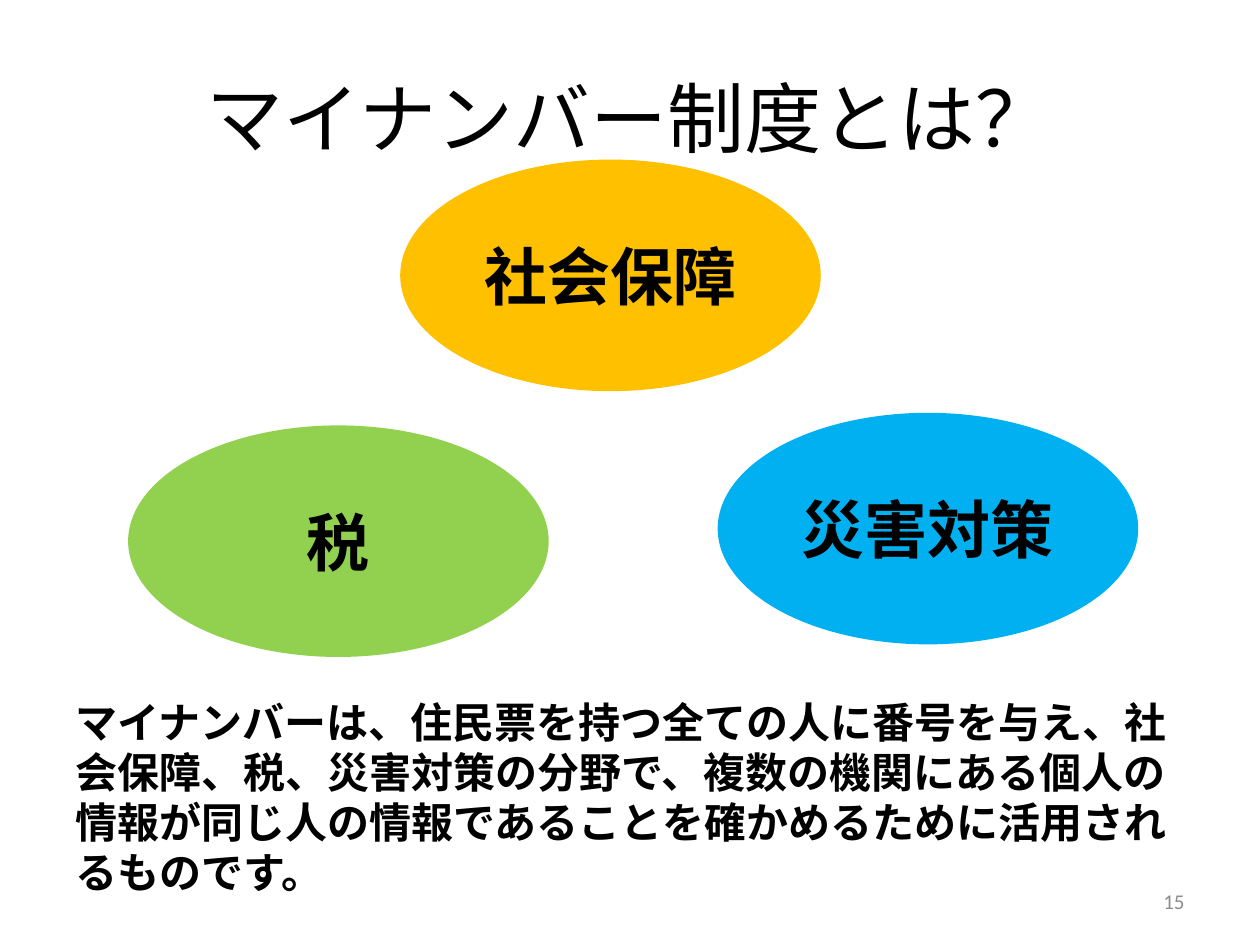
from dataclasses import dataclass

from pptx import Presentation
from pptx import util as u
from pptx.dml.color import RGBColor
from pptx.enum import shapes, text


@dataclass(frozen=True)
class Theme:
    font: str = "Calibri"
    ink: str = "000000"
    muted: str = "8C8C8C"
    security: str = "FFC000"
    tax: str = "92D050"
    disaster: str = "00B0F0"
    title_size: float = 44
    field_size: float = 36
    body_size: float = 24
    number_size: float = 12


THEME = Theme()
OVAL_SIZE = (238.3, 130.3)
LEFT, CENTER, RIGHT = (
    text.PP_ALIGN.LEFT, text.PP_ALIGN.CENTER, text.PP_ALIGN.RIGHT)
TOP, MIDDLE = text.MSO_ANCHOR.TOP, text.MSO_ANCHOR.MIDDLE


def apply_format(target, values):
    for name, value in values.items():
        setattr(target, name, value)


def write(shape, words, size, align=CENTER, anchor=MIDDLE,
          bold=False, color=THEME.ink, spacing=None):
    frame = shape.text_frame
    apply_format(frame, {"word_wrap": True, "vertical_anchor": anchor})
    para = frame.paragraphs[0]
    apply_format(para, {"alignment": align, "line_spacing": spacing})
    span = para.add_run()
    span.text = words
    apply_format(span.font, {"name": THEME.font, "size": u.Pt(size), "bold": bold})
    span.font.color.rgb = RGBColor.from_string(color)


def add_text(page, area, words, size, **style):
    box = page.shapes.add_textbox(*map(u.Pt, area))
    write(box, words, size, **style)


def add_field(page, corner, words, color):
    oval = page.shapes.add_shape(
        shapes.MSO_SHAPE.OVAL, *map(u.Pt, corner + OVAL_SIZE))
    oval.shadow.inherit = False
    oval.fill.solid()
    for paint in (oval.fill, oval.line.fill):
        paint.solid()
        paint.fore_color.rgb = RGBColor.from_string(color)
    oval.line.width = u.Pt(2)
    write(oval, words, THEME.field_size, bold=True)


def main():
    deck = Presentation()
    apply_format(deck, {"slide_width": u.Pt(720), "slide_height": u.Pt(540)})
    page = deck.slides.add_slide(deck.slide_layouts[6])
    add_text(page, (36, 21.6, 648, 90), "マイナンバー制度とは？", THEME.title_size)
    add_text(
        page, (36, 394.6, 648, 87.8),
        "マイナンバーは、住民票を持つ全ての人に番号を与え、社会保障、税、"
        "災害対策の分野で、複数の機関にある個人の情報が同じ人の情報である"
        "ことを確かめるために活用されるものです。",
        THEME.body_size, align=LEFT, anchor=TOP, bold=True, spacing=u.Pt(28.6))
    add_text(page, (516.2, 500.4, 167.8, 28.8), "15", THEME.number_size,
             align=RIGHT, color=THEME.muted)
    fields = (
        ((229.7, 92.2), "社会保障", THEME.security),
        ((74.2, 244.1), "税", THEME.tax),
        ((411.1, 236.9), "災害対策", THEME.disaster),
    )
    for corner, words, color in fields:
        add_field(page, corner, words, color)
    deck.save("out.pptx")


if __name__ == "__main__":
    main()
